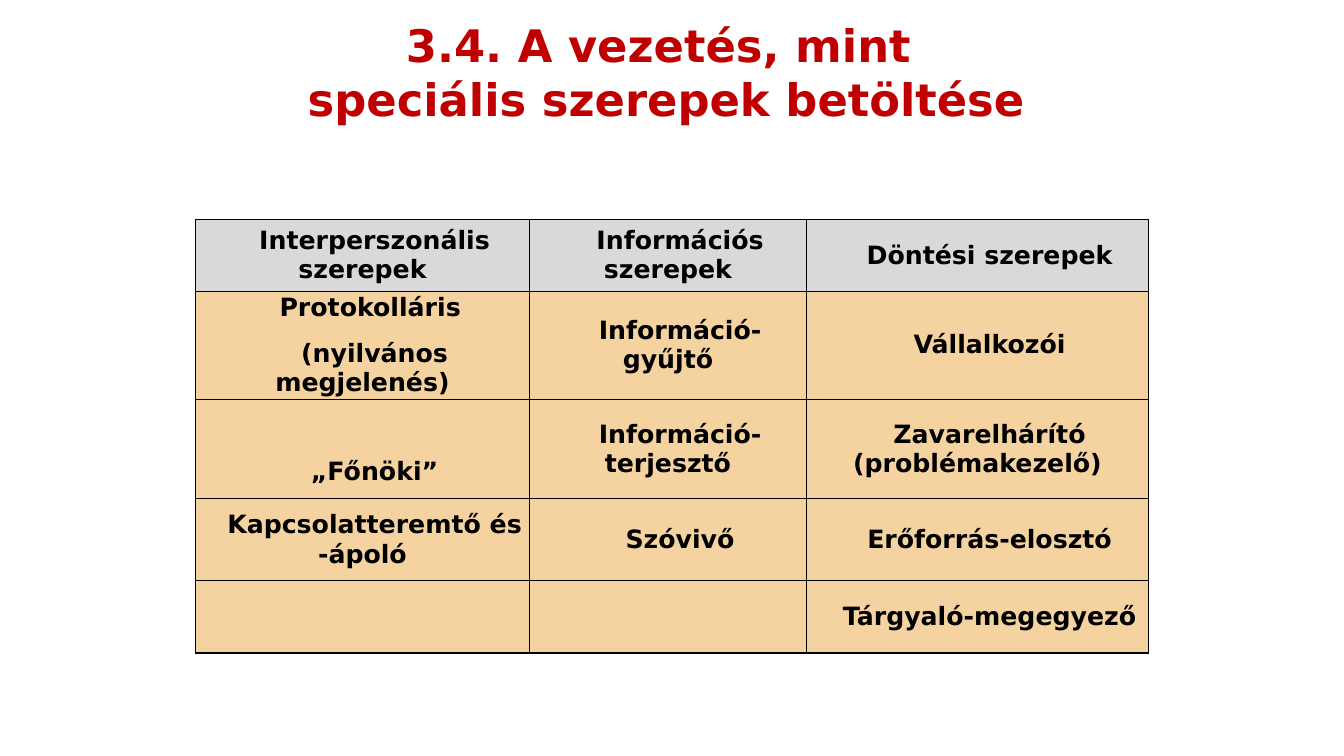
from lxml.etree import SubElement
from pptx import Presentation
from pptx.dml.color import RGBColor
from pptx.enum.text import MSO_ANCHOR, MSO_AUTO_SIZE, PP_ALIGN
from pptx.oxml.ns import qn
from pptx.util import Inches, Pt

FONT = "DejaVu Sans"
COLORS = {"title": "C00000", "text": "000000", "border": "000000",
          "header": "D9D9D9", "body": "F5D3A1"}
COLUMN_WIDTHS = [3.31, 2.75, 3.39]
ROW_HEIGHTS = [0.71, 1.07, 0.99, 0.81, 0.72]
BOSS_ROLE = "„Főnöki”"
ROLES = [
    ["Interperszonális szerepek", "Információs szerepek", "Döntési szerepek"],
    ["Protokolláris \n(nyilvános megjelenés)", "Információ-gyűjtő", "Vállalkozói"],
    [BOSS_ROLE, "Információ-terjesztő", "Zavarelhárító (problémakezelő)"],
    ["Kapcsolatteremtő és -ápoló", "Szóvivő", "Erőforrás-elosztó"],
    ["", "", "Tárgyaló-megegyező"],
]


def write_text(text_frame, text, size, color, indent=0, space_before=0):
    """Write one centred bold paragraph per line of text."""
    for index, line in enumerate(text.split("\n")):
        paragraph = text_frame.paragraphs[0] if index == 0 else text_frame.add_paragraph()
        paragraph.alignment = PP_ALIGN.CENTER
        if indent:
            paragraph._p.get_or_add_pPr().set("indent", str(Inches(indent)))
        if index and space_before:
            paragraph.space_before = Pt(space_before)
        run = paragraph.add_run()
        run.text = line
        run.font.name = FONT
        run.font.size = Pt(size)
        run.font.bold = True
        run.font.color.rgb = RGBColor.from_string(color)


def add_borders(cell):
    properties = cell._tc.get_or_add_tcPr()
    for side in ("a:lnL", "a:lnR", "a:lnT", "a:lnB"):
        line = SubElement(properties, qn(side), w=str(Pt(1)))
        fill = SubElement(line, qn("a:solidFill"))
        SubElement(fill, qn("a:srgbClr"), val=COLORS["border"])


def add_title(slide, left, top, width, height):
    title = slide.shapes.title
    title.left, title.top = Inches(left), Inches(top)
    title.width, title.height = Inches(width), Inches(height)
    text_frame = title.text_frame
    text_frame.word_wrap = True
    text_frame.auto_size = MSO_AUTO_SIZE.SHAPE_TO_FIT_TEXT
    text_frame.vertical_anchor = MSO_ANCHOR.TOP
    write_text(text_frame, "3.4. A vezetés, mint \nspeciális szerepek betöltése",
               size=32, color=COLORS["title"])


def add_roles_table(slide, left, top):
    table = slide.shapes.add_table(
        len(ROLES), len(COLUMN_WIDTHS), Inches(left), Inches(top),
        Inches(sum(COLUMN_WIDTHS)), Inches(sum(ROW_HEIGHTS))).table
    for column, width in zip(table.columns, COLUMN_WIDTHS):
        column.width = Inches(width)
    for row, height in zip(table.rows, ROW_HEIGHTS):
        row.height = Inches(height)
    for row_index, roles in enumerate(ROLES):
        for column_index, role in enumerate(roles):
            cell = table.cell(row_index, column_index)
            add_borders(cell)
            cell.fill.solid()
            fill = COLORS["body" if row_index else "header"]
            cell.fill.fore_color.rgb = RGBColor.from_string(fill)
            cell.vertical_anchor = MSO_ANCHOR.MIDDLE
            cell.margin_left = cell.margin_right = Inches(0.07)
            cell.margin_top = Inches(0.45 if role == BOSS_ROLE else 0)
            cell.margin_bottom = 0
            if role:
                write_text(cell.text_frame, role, size=18, color=COLORS["text"],
                           indent=0.24, space_before=12)


def main():
    presentation = Presentation()
    presentation.slide_width = Inches(13.33)
    presentation.slide_height = Inches(7.5)
    slide = presentation.slides.add_slide(presentation.slide_layouts[5])
    add_title(slide, 1.67, 0.13, 9.88, 1.18)
    add_roles_table(slide, 1.94, 2.18)
    presentation.save("out.pptx")


if __name__ == "__main__":
    main()
